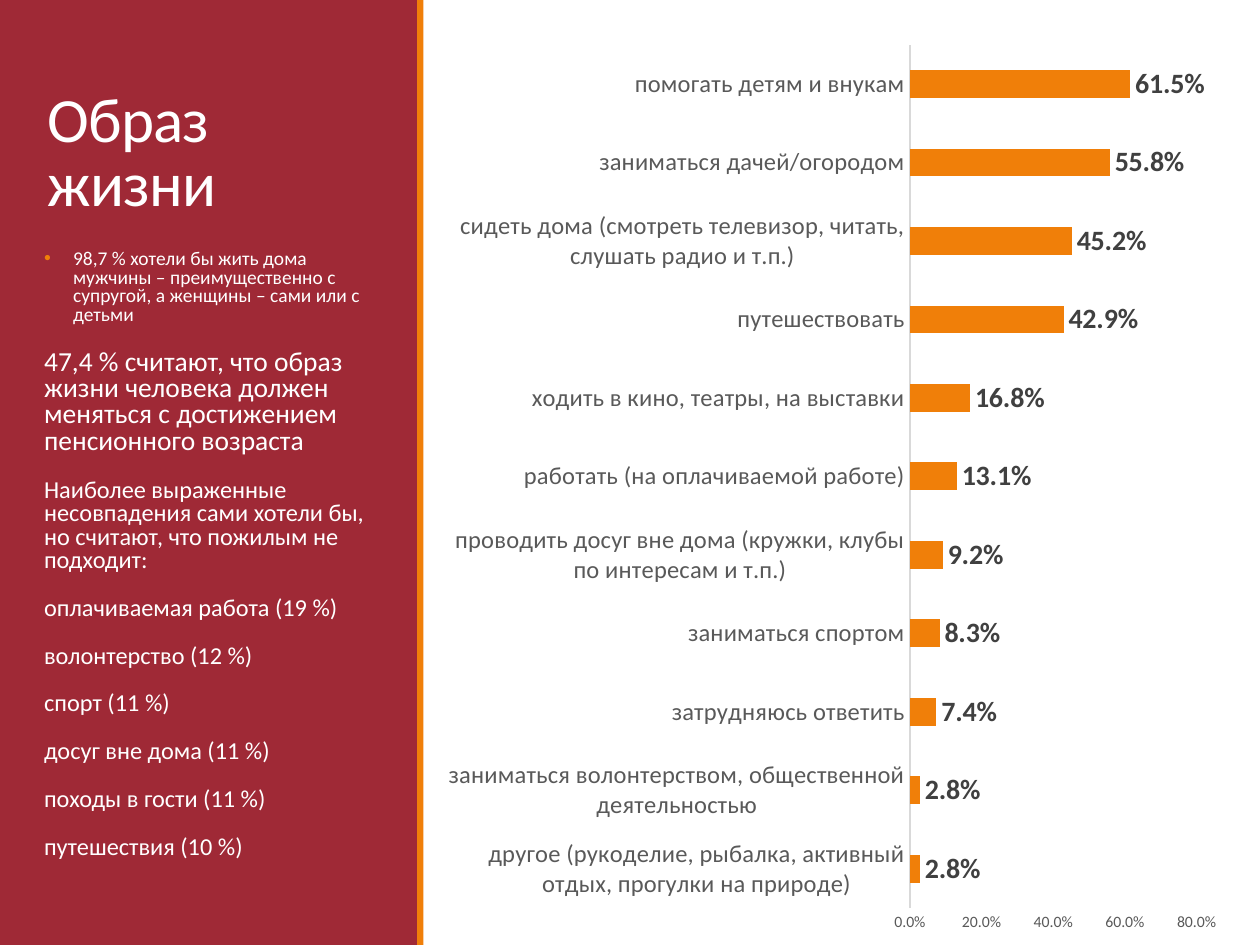
from dataclasses import dataclass

from lxml import etree
from pptx import Presentation
from pptx.chart.data import CategoryChartData
from pptx.dml.color import RGBColor
from pptx.enum.chart import XL_CHART_TYPE as ChartType
from pptx.enum.chart import XL_LABEL_POSITION as LabelPosition
from pptx.enum.chart import XL_TICK_MARK as TickMark
from pptx.enum.shapes import MSO_SHAPE as Shape
from pptx.enum.text import MSO_ANCHOR as Anchor
from pptx.enum.text import MSO_AUTO_SIZE as AutoSize
from pptx.enum.text import PP_ALIGN as Align
from pptx.oxml.ns import qn
from pptx.util import Inches, Pt


# Theme
@dataclass(frozen=True)
class Theme:
    font: str = "Calibri"
    red: str = "9F2936"
    orange: str = "F07F09"
    white: str = "FFFFFF"
    axis_text: str = "595959"
    axis_line: str = "D9D9D9"
    value_text: str = "404040"
    title: float = 36
    note: float = 11.1
    lead: float = 15.7
    body: float = 13.9
    category: float = 14
    scale: float = 9
    value: float = 16


THEME = Theme()

# Content
TITLE = "Образ жизни"
BULLET_LINES = [
    "98,7 % хотели бы жить дома",
    "мужчины – преимущественно с супругой, а женщины – сами или с детьми",
]
LEAD = "47,4 % считают, что образ жизни человека должен меняться с достижением пенсионного возраста"
MISMATCH_INTRO = "Наиболее выраженные несовпадения сами хотели бы, но считают, что пожилым не подходит:"
MISMATCHES = [
    "оплачиваемая работа (19 %)",
    "волонтерство (12 %)",
    "спорт (11 %)",
    "досуг вне дома (11 %)",
    "походы в гости (11 %)",
    "путешествия (10 %)",
]
ACTIVITIES = [  # bottom to top
    ("другое (рукоделие, рыбалка, активный отдых, прогулки на природе)", 0.028),
    ("заниматься волонтерством, общественной деятельностью", 0.028),
    ("затрудняюсь ответить", 0.074),
    ("заниматься спортом", 0.083),
    ("проводить досуг вне дома (кружки, клубы по интересам и т.п.)", 0.092),
    ("работать (на оплачиваемой работе)", 0.131),
    ("ходить в кино, театры, на выставки", 0.168),
    ("путешествовать", 0.429),
    ("сидеть дома (смотреть телевизор, читать, слушать радио и т.п.)", 0.452),
    ("заниматься дачей/огородом", 0.558),
    ("помогать детям и внукам", 0.615),
]

# Layout, in inches: left, top, width, height
WIDTH, HEIGHT = 10, 7.5
PANEL = (0, 0, 3.32, HEIGHT)
STRIPE = (3.31, 0, 0.05, HEIGHT)
TITLE_BOX = (0.28, 0.44, 2.62, 1.35)
BODY_BOX = (0.25, 1.94, 2.75, 5.28)
CHART_BOX = (3.43, 0.21, 6.32, 7.29)
PLOT_SHARES = {"x": 0.6, "y": 0.02, "w": 0.36, "h": 0.94}
BULLET_INDENT = 0.23


def inches(box):
    return [Inches(length) for length in box]


def place(shape, box):
    shape.left, shape.top, shape.width, shape.height = inches(box)


def style(font, size, color, bold=False):
    font.name, font.size, font.bold = THEME.font, Pt(size), bold
    font.color.rgb = RGBColor.from_string(color)


def add_run(paragraph, text, size):
    run = paragraph.add_run()
    run.text = text
    style(run.font, size, THEME.white)
    return run


def set_bullet(paragraph, bulleted):
    props = paragraph._p.get_or_add_pPr()
    indent = Inches(BULLET_INDENT) if bulleted else 0
    props.set("marL", str(indent))
    props.set("indent", str(-indent))
    if bulleted:
        color = etree.SubElement(props, qn("a:buClr"))
        etree.SubElement(color, qn("a:srgbClr"), val=THEME.orange)
        etree.SubElement(props, qn("a:buChar"), char="•")
    else:
        etree.SubElement(props, qn("a:buNone"))


def add_band(slide, box, color):
    band = slide.shapes.add_shape(Shape.RECTANGLE, *inches(box))
    band.shadow.inherit = False
    band.fill.solid()
    band.fill.fore_color.rgb = RGBColor.from_string(color)
    band.line.fill.background()
    slide.shapes.title.element.addprevious(band.element)  # behind the text


def fill_title(title):
    place(title, TITLE_BOX)
    frame = title.text_frame
    frame.word_wrap, frame.auto_size = True, AutoSize.NONE
    frame.vertical_anchor = Anchor.BOTTOM
    heading = frame.paragraphs[0]
    heading.alignment, heading.line_spacing = Align.LEFT, 0.85
    run = add_run(heading, TITLE, THEME.title)
    run.font._element.set("spc", "-50")


def fill_body(body):
    place(body, BODY_BOX)
    frame = body.text_frame
    frame.word_wrap, frame.auto_size = True, AutoSize.NONE
    items = [(BULLET_LINES, THEME.note, True), ([LEAD], THEME.lead, False)]
    items += [([text], THEME.body, False) for text in [MISMATCH_INTRO, *MISMATCHES]]
    for number, (lines, size, bulleted) in enumerate(items):
        paragraph = frame.add_paragraph() if number else frame.paragraphs[0]
        paragraph.line_spacing = 0.8
        paragraph.space_before, paragraph.space_after = Pt(12), Pt(2)
        set_bullet(paragraph, bulleted)
        for line_number, line in enumerate(lines):
            if line_number:
                paragraph.add_line_break()
            add_run(paragraph, line, size)


def add_activity_chart(slide):
    data = CategoryChartData(number_format="0.0%")
    data.categories = [name for name, _ in ACTIVITIES]
    data.add_series("Series 1", [share for _, share in ACTIVITIES])
    chart = slide.shapes.add_chart(ChartType.BAR_CLUSTERED, *inches(CHART_BOX), data).chart
    chart.has_legend = chart.has_title = False
    chart.font.name, chart.font.size = THEME.font, Pt(10)

    # Bars and their values
    plot = chart.plots[0]
    plot.gap_width, plot.vary_by_categories = 182, False
    bars = plot.series[0]
    bars.format.fill.solid()
    bars.format.fill.fore_color.rgb = RGBColor.from_string(THEME.orange)
    labels = bars.data_labels
    labels.show_value, labels.position = True, LabelPosition.OUTSIDE_END
    labels.number_format, labels.number_format_is_linked = "0.0%", False
    style(labels.font, THEME.value, THEME.value_text, bold=True)

    # Axes
    names, scale = chart.category_axis, chart.value_axis
    for axis, size in ((names, THEME.category), (scale, THEME.scale)):
        axis.major_tick_mark = axis.minor_tick_mark = TickMark.NONE
        axis.has_major_gridlines = False
        style(axis.tick_labels.font, size, THEME.axis_text)
    names.format.line.color.rgb = RGBColor.from_string(THEME.axis_line)
    names.format.line.width = Pt(0.75)
    scale.format.line.fill.background()
    scale.minimum_scale, scale.maximum_scale, scale.major_unit = 0, 0.8, 0.2
    scale.tick_labels.number_format = "0.0%"
    scale.tick_labels.number_format_is_linked = False

    # Plot area as shares of the chart
    area = chart.element.find(".//" + qn("c:plotArea"))
    for old in area.findall(qn("c:layout")):
        area.remove(old)
    layout = etree.Element(qn("c:layout"))
    area.insert(0, layout)
    manual = etree.SubElement(layout, qn("c:manualLayout"))
    settings = {"layoutTarget": "inner", "xMode": "edge", "yMode": "edge", **PLOT_SHARES}
    for tag, value in settings.items():
        etree.SubElement(manual, qn("c:" + tag), val=str(value))


def main():
    deck = Presentation()
    deck.slide_width, deck.slide_height = Inches(WIDTH), Inches(HEIGHT)
    slide = deck.slides.add_slide(deck.slide_layouts[1])
    add_band(slide, PANEL, THEME.red)
    add_band(slide, STRIPE, THEME.orange)
    fill_title(slide.shapes.title)
    fill_body(slide.placeholders[1])
    add_activity_chart(slide)
    deck.save("out.pptx")


if __name__ == "__main__":
    main()
